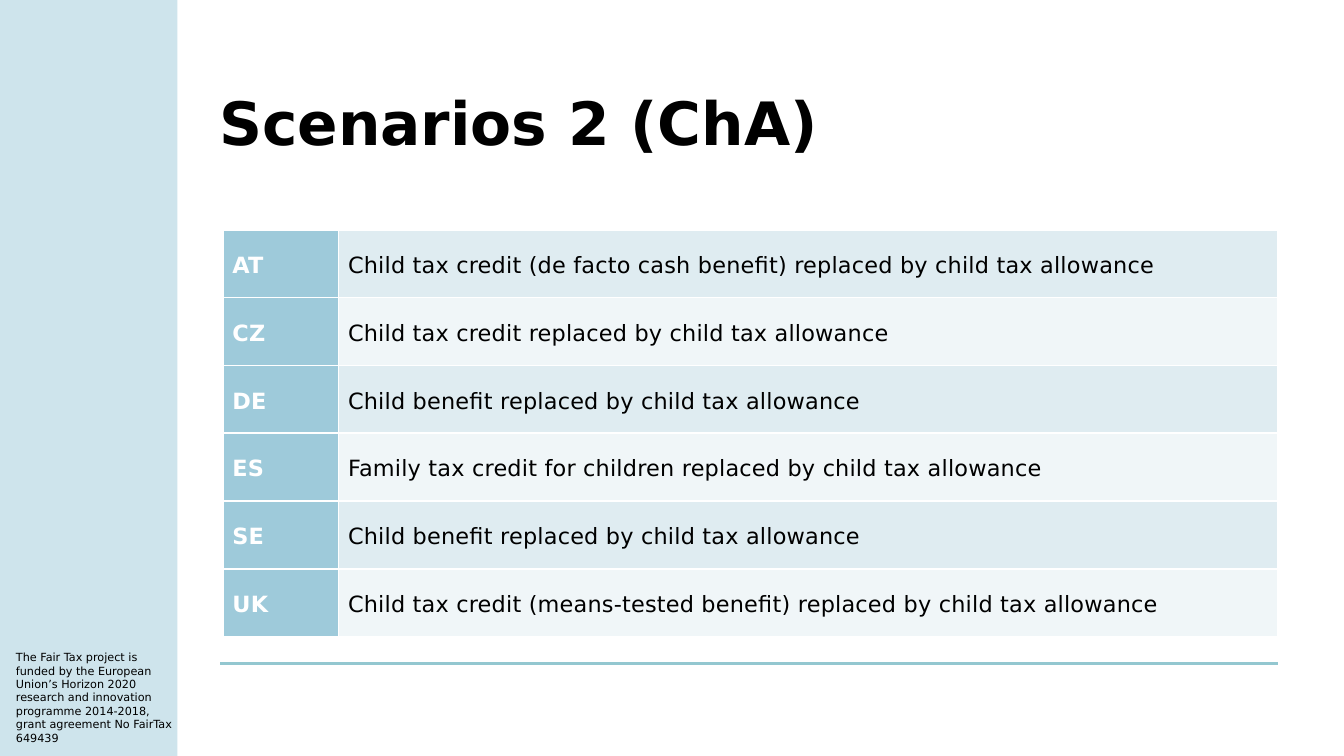
from lxml import etree
from pptx import Presentation
from pptx.dml.color import RGBColor
from pptx.enum.shapes import MSO_CONNECTOR, MSO_SHAPE
from pptx.enum.text import MSO_ANCHOR, PP_ALIGN
from pptx.oxml.ns import qn
from pptx.util import Inches, Pt

RECTANGLE = MSO_SHAPE.RECTANGLE
STRAIGHT = MSO_CONNECTOR.STRAIGHT
MIDDLE = MSO_ANCHOR.MIDDLE
LEFT = PP_ALIGN.LEFT

FONT = "DejaVu Sans"
BLACK = RGBColor(0x00, 0x00, 0x00)
WHITE = RGBColor(0xFF, 0xFF, 0xFF)
BLUE = RGBColor(0x9E, 0xCA, 0xDA)
TEAL = RGBColor(0x93, 0xC7, 0xD0)
BANDS = [RGBColor(0xDF, 0xEC, 0xF1), RGBColor(0xF0, 0xF6, 0xF8)]

# 16:9 page
PAGE_WIDTH = Inches(10)
PAGE_HEIGHT = PAGE_WIDTH * 9 // 16

FUNDING = (
    "The Fair Tax project is funded by the European Union’s Horizon 2020 "
    "research and innovation programme 2014-2018, grant agreement No FairTax 649439"
)
SCENARIOS = [
    ("AT", "Child tax credit (de facto cash benefit) replaced by child tax allowance"),
    ("CZ", "Child tax credit replaced by child tax allowance"),
    ("DE", "Child benefit replaced by child tax allowance"),
    ("ES", "Family tax credit for children replaced by child tax allowance"),
    ("SE", "Child benefit replaced by child tax allowance"),
    ("UK", "Child tax credit (means-tested benefit) replaced by child tax allowance"),
]
COLUMN_WIDTHS = [0.86, 6.99]
TABLE_HEIGHT = Inches(3.03)


def set_font(para, size, color, bold=False):
    para.font.name = FONT
    para.font.size = Pt(size)
    para.font.bold = bold
    para.font.color.rgb = color


def add_sidebar(page):
    bar = page.shapes.add_shape(RECTANGLE, 0, 0, Inches(1.32), PAGE_HEIGHT)
    bar.shadow.inherit = False
    bar.fill.solid()
    bar.fill.fore_color.rgb = BLUE
    bar.line.fill.background()
    # Half-transparent fill
    color = bar._element.spPr.find(qn("a:solidFill"))[0]
    etree.SubElement(color, qn("a:alpha"), val="50000")


def add_rule(page):
    rule = page.shapes.add_connector(
        STRAIGHT, Inches(1.64), Inches(4.94), Inches(9.51), Inches(4.94))
    rule.line.color.rgb = TEAL
    rule.line.width = Pt(1.5)
    etree.SubElement(rule._element.spPr, qn("a:effectLst"))


def add_funding_note(page):
    box = page.shapes.add_textbox(Inches(0.02), Inches(4.79), Inches(1.38), Inches(0.81))
    frame = box.text_frame
    frame.word_wrap = True
    frame.text = FUNDING
    set_font(frame.paragraphs[0], 6, BLACK)


def fill_title(page, text):
    title = page.shapes.title
    title.left, title.top = Inches(1.53), Inches(0.65)
    title.width, title.height = Inches(7.98), Inches(0.58)
    frame = title.text_frame
    frame.vertical_anchor = MIDDLE
    frame.text = text
    para = frame.paragraphs[0]
    para.alignment = LEFT
    para.line_spacing = 0.9
    set_font(para, 32, BLACK, bold=True)


def add_borders(cell):
    properties = cell._tc.get_or_add_tcPr()
    for side in ("a:lnL", "a:lnR", "a:lnT", "a:lnB"):
        line = etree.SubElement(properties, qn(side), w=str(Pt(1)))
        fill = etree.SubElement(line, qn("a:solidFill"))
        etree.SubElement(fill, qn("a:srgbClr"), val=str(WHITE))


def fill_cell(cell, text, fill, color, bold):
    add_borders(cell)
    cell.fill.solid()
    cell.fill.fore_color.rgb = fill
    cell.vertical_anchor = MIDDLE
    cell.margin_left = cell.margin_right = Inches(0.07)
    cell.margin_top = cell.margin_bottom = 0
    cell.text = text
    para = cell.text_frame.paragraphs[0]
    para.line_spacing = 1.15
    para.space_after = Pt(6)
    set_font(para, 12, color, bold)
    # Letter spacing of 0.1 pt
    para.runs[0]._r.get_or_add_rPr().set("spc", "10")


def add_scenario_table(page):
    table = page.shapes.add_table(
        len(SCENARIOS), len(COLUMN_WIDTHS), Inches(1.66), Inches(1.71),
        Inches(sum(COLUMN_WIDTHS)), TABLE_HEIGHT).table
    for column, width in zip(table.columns, COLUMN_WIDTHS):
        column.width = Inches(width)
    table.first_row = False
    table.first_col = True
    for index, (country, reform) in enumerate(SCENARIOS):
        fill_cell(table.cell(index, 0), country, BLUE, WHITE, True)
        fill_cell(table.cell(index, 1), reform, BANDS[index % 2], BLACK, False)


def main():
    deck = Presentation()
    deck.slide_width, deck.slide_height = PAGE_WIDTH, PAGE_HEIGHT
    page = deck.slides.add_slide(deck.slide_layouts[5])

    # Page frame
    add_sidebar(page)
    add_rule(page)
    add_funding_note(page)

    # Content
    fill_title(page, "Scenarios 2 (ChA)")
    add_scenario_table(page)

    deck.save("out.pptx")


if __name__ == "__main__":
    main()
